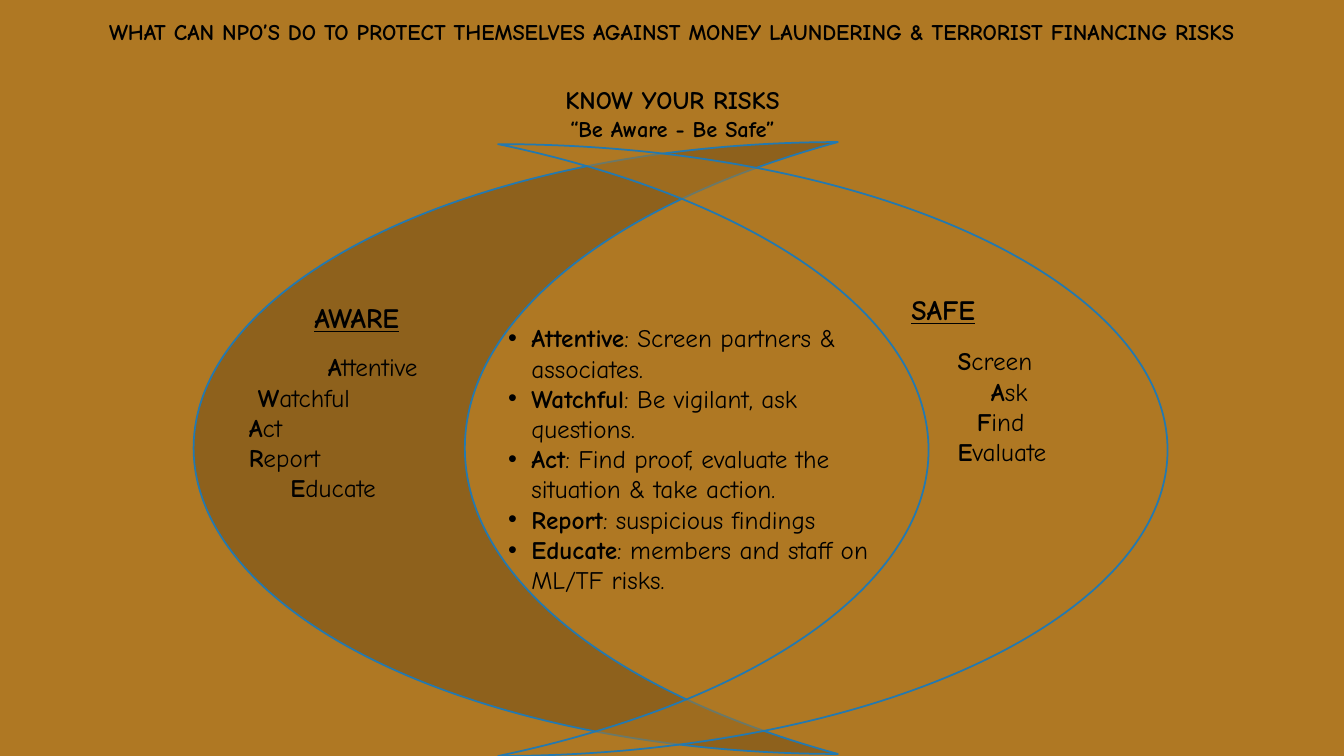
from lxml.etree import SubElement
from pptx import Presentation
from pptx.dml.color import RGBColor
from pptx.enum.shapes import MSO_SHAPE as Shape
from pptx.enum.text import MSO_ANCHOR as Anchor, MSO_AUTO_SIZE as AutoSize, PP_ALIGN as Align
from pptx.oxml.ns import qn
from pptx.util import Inches, Pt

WIDTH, HEIGHT = 13.33, 7.5
FONT = "Comic Neue"
OCHRE = RGBColor(0xAF, 0x78, 0x23)
BROWN = RGBColor(0x75, 0x50, 0x17)
BLUE = RGBColor(0x23, 0x79, 0xB0)
BLACK = RGBColor(0, 0, 0)

TITLE = ("WHAT CAN NPO’S DO TO PROTECT THEMSELVES AGAINST "
         "MONEY LAUNDERING & TERRORIST FINANCING RISKS")
SUBTITLE = [("KNOW YOUR RISKS", 18), ("“Be Aware - Be Safe”", 16)]

# Left, top, width, height, adjustment, rotation, fill, opacity in percent
MOONS = [
    (1.92, 1.41, 6.39, 6.07, 0.421, 0, BROWN, 57),
    (4.94, 1.43, 6.64, 6.07, 0.357, 180, OCHRE, 51),
]

HEADINGS = [("AWARE", (3.02, 2.93, 1.58, 0.44)), ("SAFE", (8.94, 2.85, 1.39, 0.52))]

# Each word: text, alignment, indent in inches
ACROSTICS = [
    ((2.37, 3.44, 1.87, 1.62), [
        ("Attentive", Align.RIGHT, 0), ("Watchful", Align.LEFT, 0.09),
        ("Act", Align.LEFT, 0), ("Report", Align.LEFT, 0), ("Educate", Align.CENTER, 0)]),
    ((9.23, 3.38, 1.86, 1.55), [
        ("Screen", Align.LEFT, 0.17), ("Ask", Align.LEFT, 0.5),
        ("Find", Align.LEFT, 0.36), ("Evaluate", Align.LEFT, 0.17)]),
]

ADVICE = [
    ("Attentive", ": Screen partners & associates."),
    ("Watchful", ": Be vigilant, ask questions."),
    ("Act", ": Find proof, evaluate the situation & take action."),
    ("Report", ": suspicious findings"),
    ("Educate", ": members and staff on ML/TF risks."),
]


def add_moon(page, left, top, width, height, curve, rotation, colour, opacity):
    moon = page.shapes.add_shape(Shape.MOON, *map(Inches, (left, top, width, height)))
    moon.shadow.inherit = False
    moon.adjustments[0] = curve
    moon.rotation = rotation
    moon.fill.solid()
    moon.fill.fore_color.rgb = colour
    tint = moon._element.spPr.find(qn("a:solidFill"))[0]
    SubElement(tint, qn("a:alpha"), val=str(opacity * 1000))
    moon.line.color.rgb = BLUE
    moon.line.width = Pt(1.25)


def place(box, left, top, width, height):
    """Set the position of a box and make its text wrap from the top."""
    box.left, box.top, box.width, box.height = map(Inches, (left, top, width, height))
    frame = box.text_frame
    frame.word_wrap = True
    frame.auto_size = AutoSize.NONE
    frame.vertical_anchor = Anchor.TOP
    return frame


def add_box(page, area):
    return place(page.shapes.add_textbox(0, 0, 0, 0), *area)


def write(frame, spans, size=18, align=Align.LEFT, indent=0, bullet=None, underline=None):
    """Add one paragraph made of (text, bold) spans."""
    first = frame.paragraphs[0]
    para = first if not first.runs else frame.add_paragraph()
    properties = para._p.get_or_add_pPr()
    properties.set("marL", str(Inches(indent)))
    properties.set("indent", str(Inches(-indent if bullet else 0)))
    if bullet:
        SubElement(properties, qn("a:buFont"), typeface="Arial")
        SubElement(properties, qn("a:buChar"), char=bullet)
    para.alignment = align
    para.line_spacing = 1.0
    para.space_before = Pt(0)
    for text, bold in spans:
        span = para.add_run()
        span.text = text
        font = span.font
        font.name, font.size, font.bold = FONT, Pt(size), bold
        font.underline = underline
        font.color.rgb = BLACK


def main():
    deck = Presentation()
    deck.slide_width, deck.slide_height = Inches(WIDTH), Inches(HEIGHT)
    page = deck.slides.add_slide(deck.slide_layouts[1])
    page.background.fill.solid()
    page.background.fill.fore_color.rgb = OCHRE
    title, body = page.placeholders

    for moon in MOONS:
        add_moon(page, *moon)
    for area, words in ACROSTICS:
        frame = add_box(page, area)
        for word, align, indent in words:
            write(frame, [(word[0], True), (word[1:], False)], align=align, indent=indent)
    for heading, area in HEADINGS:
        write(add_box(page, area), [(heading, True)], size=20, underline=True)

    write(place(title, 0, 0.13, WIDTH, 0.64), [(TITLE, True)], size=16, align=Align.CENTER)
    frame = add_box(page, (4.53, 0.79, 4.28, 0.67))
    for line, size in SUBTITLE:
        write(frame, [(line, True)], size=size, align=Align.CENTER)

    frame = place(body, 4.94, 3.15, 4.04, 3)
    for term, meaning in ADVICE:
        write(frame, [(term, True), (meaning, False)], indent=0.23, bullet="•")
    for box in (title, body):  # bring the placeholders in front of the moons
        page.shapes._spTree.append(box._element)

    deck.save("out.pptx")


if __name__ == "__main__":
    main()
